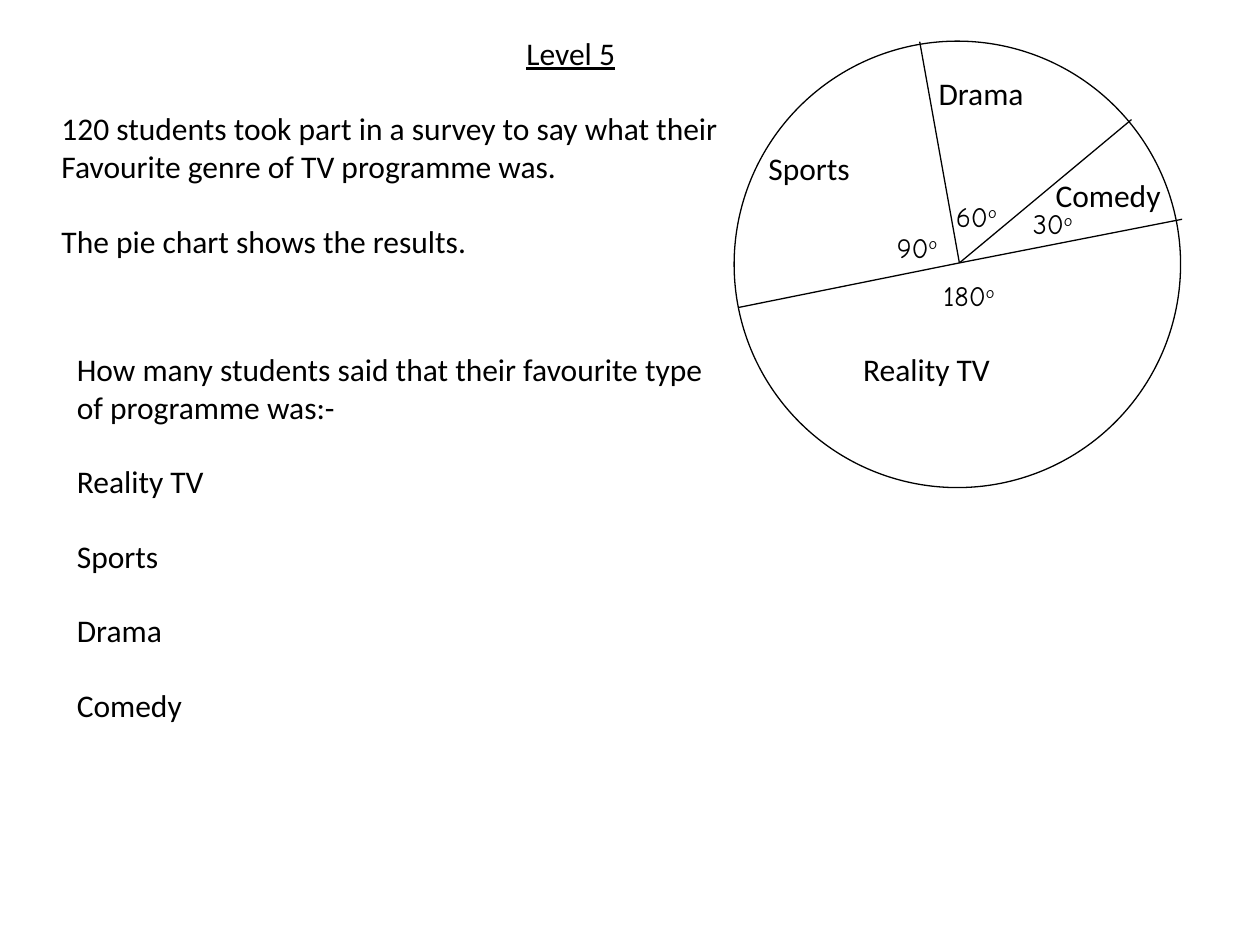
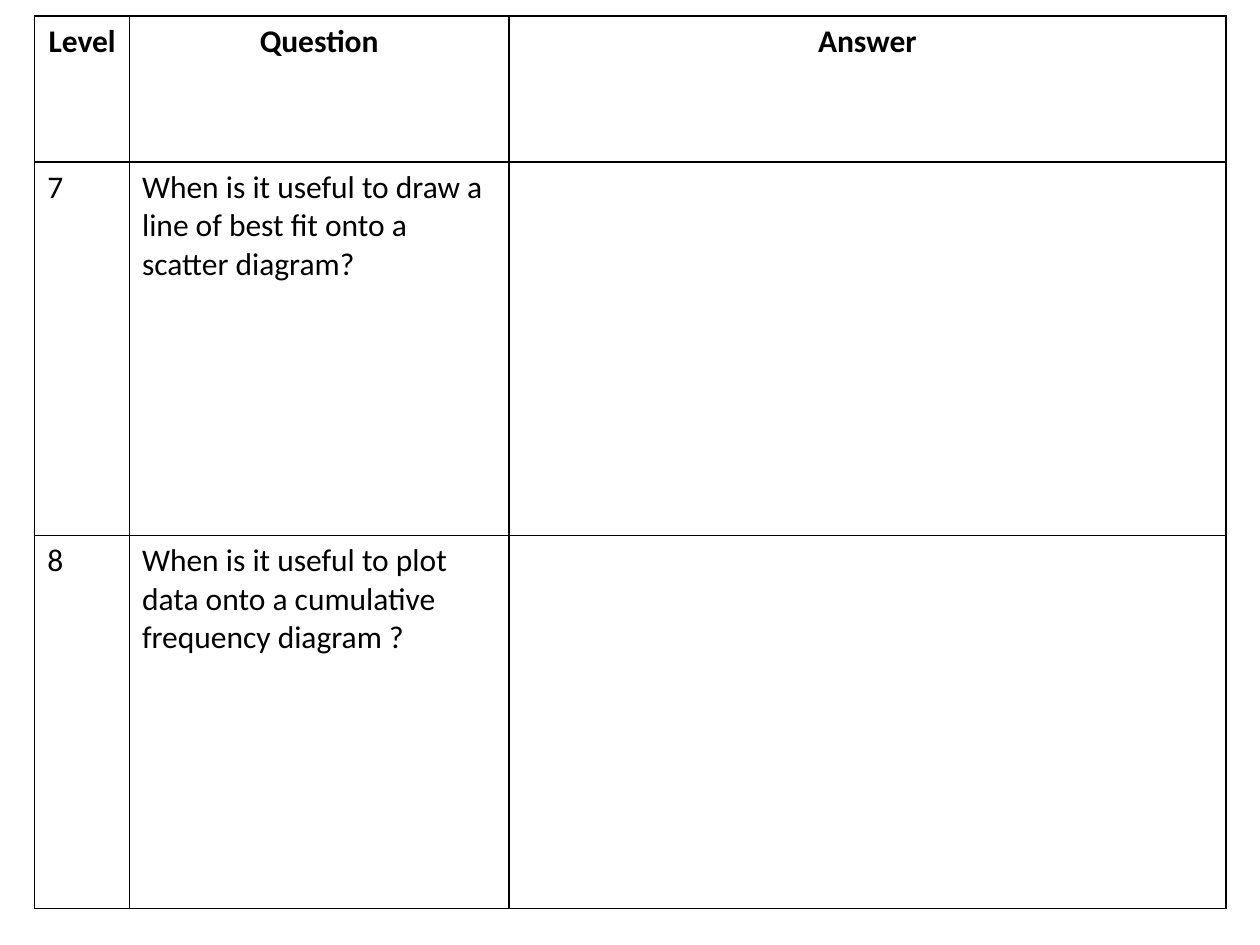
from lxml.etree import SubElement
from pptx import Presentation
from pptx.dml.color import RGBColor
from pptx.enum.shapes import MSO_CONNECTOR as Connector, MSO_SHAPE as Shape
from pptx.enum.text import MSO_ANCHOR as Anchor, MSO_AUTO_SIZE as AutoSize, PP_ALIGN as Align
from pptx.oxml.ns import qn
from pptx.util import Cm, Pt

COLOURS = {"ink": "000000"}
INK = RGBColor.from_string(COLOURS["ink"])
BODY_FONT, ANGLE_FONT = "Calibri", "Comic Neue"
BODY_SIZE, ANGLE_SIZE = 18, 16
LINE_GAP = Pt(21)

HUB = (19.34, 5.3)
RADIUS = 4.5
PIE_LEFT, PIE_TOP = 14.8, 0.83
SPOKE_ENDS = [(14.88, 6.2), (22.81, 2.41), (18.54, 0.84), (23.83, 4.42)]
ANGLES = [("30", 20.57, 4.04, 1.42), ("60", 19.02, 3.89, 1.42),
          ("90", 17.83, 4.52, 1.42), ("180", 18.77, 5.49, 1.83)]
GENRES = [("Reality TV", 17.15, 6.93, 4.45), ("Sports", 15.24, 2.87, 4.45),
          ("Drama", 18.67, 1.37, 4.45), ("Comedy", 21.03, 3.43, 2.92)]

COLUMN_WIDTHS = [1.91, 7.65, 14.45]
ROW_HEIGHTS = [2.95, 7.52, 7.52]
QUESTIONS = [
    ("Level", "Question", "Answer"),
    ("7", "When is it useful to draw a line of best fit onto a scatter diagram?", ""),
    ("8", "When is it useful to plot data onto a cumulative frequency diagram ?", ""),
]


def style(paragraph, font=BODY_FONT, size=BODY_SIZE, align=Align.LEFT, bold=False):
    """Set the font, size, colour and alignment of a paragraph."""
    paragraph.alignment = align
    paragraph.font.name = font
    paragraph.font.size = Pt(size)
    paragraph.font.bold = bold
    paragraph.font.color.rgb = INK


def add_title(slide, wording):
    """Place the underlined slide title."""
    title = slide.shapes.title
    title.left, title.top, title.width, title.height = Cm(0.99), Cm(0.56), Cm(21.03), Cm(1.02)
    frame = title.text_frame
    frame.text = wording
    frame.vertical_anchor = Anchor.TOP
    frame.auto_size = AutoSize.NONE
    style(frame.paragraphs[0], align=Align.CENTER)
    frame.paragraphs[0].font.underline = True


def add_text(slide, left, top, width, height, lines, spaced=(), **look):
    """Add a text box, with a line's gap above the paragraphs listed in spaced."""
    frame = slide.shapes.add_textbox(Cm(left), Cm(top), Cm(width), Cm(height)).text_frame
    frame.word_wrap = True
    frame.auto_size = AutoSize.SHAPE_TO_FIT_TEXT
    for index, line in enumerate(lines):
        paragraph = frame.paragraphs[0] if index == 0 else frame.add_paragraph()
        paragraph.text = line
        style(paragraph, **look)
        if index in spaced:
            paragraph.space_before = LINE_GAP
    return frame


def add_angle(slide, degrees, left, top, width):
    """Add an angle label with a raised degree letter."""
    frame = add_text(slide, left, top, width, 0.94, [degrees], font=ANGLE_FONT, size=ANGLE_SIZE)
    degree_mark = frame.paragraphs[0].add_run()
    degree_mark.text = "o"
    degree_mark.font._element.set("baseline", "30000")


def add_spoke(slide, end):
    """Draw a thin line from the hub of the pie to its rim."""
    spoke = slide.shapes.add_connector(Connector.STRAIGHT, *map(Cm, HUB + end))
    spoke.line.color.rgb = INK
    spoke.line.width = Pt(0.75)
    SubElement(spoke._element.spPr, qn("a:effectLst"))


def add_pie(slide):
    """Draw the pie outline, its spokes and its labels."""
    rim = slide.shapes.add_shape(Shape.OVAL, Cm(PIE_LEFT), Cm(PIE_TOP), Cm(2 * RADIUS), Cm(2 * RADIUS))
    rim.shadow.inherit = False
    rim.fill.background()
    rim.line.color.rgb = INK
    rim.line.width = Pt(0.75)
    for end in SPOKE_ENDS:
        add_spoke(slide, end)
    for angle in ANGLES:
        add_angle(slide, *angle)
    for genre, left, top, width in GENRES:
        add_text(slide, left, top, width, 1.02, [genre])


def add_borders(cell):
    """Rule all four sides of a cell."""
    properties = cell._tc.get_or_add_tcPr()
    for side in ("lnL", "lnR", "lnT", "lnB"):
        edge = SubElement(properties, qn(f"a:{side}"), w=str(Pt(1)))
        SubElement(SubElement(edge, qn("a:solidFill")), qn("a:srgbClr"), val=COLOURS["ink"])


def add_question_table(slide):
    """Add the ruled table of questions with room for answers."""
    table = slide.shapes.add_table(
        len(ROW_HEIGHTS), len(COLUMN_WIDTHS), Cm(0.7), Cm(0.32),
        Cm(sum(COLUMN_WIDTHS)), Cm(sum(ROW_HEIGHTS))).table
    table.first_row = table.horz_banding = False
    for column, width in zip(table.columns, COLUMN_WIDTHS):
        column.width = Cm(width)
    for row_index, (row, height) in enumerate(zip(table.rows, ROW_HEIGHTS)):
        row.height = Cm(height)
        heading = row_index == 0
        for cell, wording in zip(row.cells, QUESTIONS[row_index]):
            cell.text = wording
            style(cell.text_frame.paragraphs[0], bold=heading,
                  align=Align.CENTER if heading else Align.LEFT)
            add_borders(cell)
            cell.fill.background()


def main():
    """Build the survey slide and the question slide."""
    deck = Presentation()
    deck.slide_width, deck.slide_height = Cm(25.4), Cm(19.05)
    title_only, blank = deck.slide_layouts[5], deck.slide_layouts[6]

    survey = deck.slides.add_slide(title_only)
    add_title(survey, "Level 5")
    add_pie(survey)
    add_text(survey, 0.99, 2.08, 21.03, 3.35, [
        "120 students took part in a survey to say what their",
        "Favourite genre of TV programme was.",
        "The pie chart shows the results."], spaced=[2])
    genre_names = [genre[0] for genre in GENRES]
    add_text(survey, 1.3, 6.93, 13.51, 8.71, [
        "How many students said that their favourite type of programme was:-",
        *genre_names], spaced=range(1, 5))

    add_question_table(deck.slides.add_slide(blank))
    deck.save("out.pptx")


if __name__ == "__main__":
    main()
